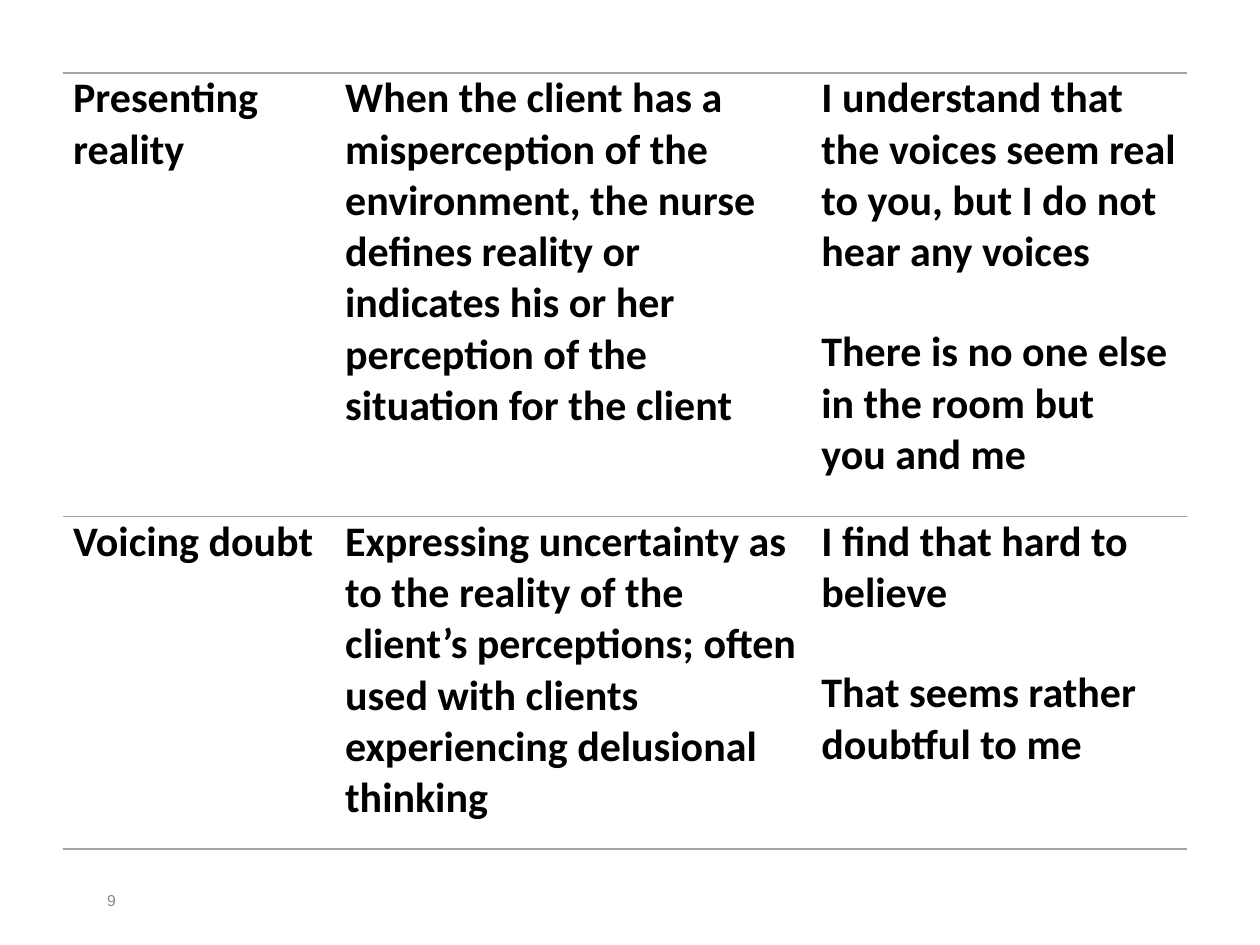
import pptx
import pptx.util
import pptx.dml.color
import pptx.enum.text
import lxml.etree

Inches, Pt = pptx.util.Inches, pptx.util.Pt
BLACK = pptx.dml.color.RGBColor(0x00, 0x00, 0x00)
GREY = pptx.dml.color.RGBColor(0x88, 0x88, 0x88)
RULE = pptx.dml.color.RGBColor(0xA4, 0xA4, 0xA4)
NS = "http://schemas.openxmlformats.org/drawingml/2006/main"

# Content: each cell is a list of statements; \v breaks a line
ROWS = [
    [["Presenting\vreality"],
     ["When the client has a\vmisperception of the\venvironment, the nurse\v"
      "defines reality or\vindicates his or her\vperception of the\v"
      "situation for the client"],
     ["I understand that\vthe voices seem real\vto you, but I do not\v"
      "hear any voices",
      "There is no one else\vin the room but\vyou and me"]],
    [["Voicing doubt"],
     ["Expressing uncertainty as\vto the reality of the\v"
      "client’s perceptions; often\vused with clients\v"
      "experiencing delusional\vthinking"],
     ["I find that hard to\vbelieve",
      "That seems rather\vdoubtful to me"]],
]
WIDTHS = [2.11, 3.82, 2.99]
HEIGHTS = [3.52, 2.64]
INDENTS = [0.08, 0.13, 0.09]
GAP = Pt(28)


def style(para, name, size, color, bold=False):
    font = para.font
    font.name, font.size, font.bold = name, Pt(size), bold
    font.color.rgb = color


def border(cell):
    """Rule the top and bottom of a cell, leaving its sides open."""
    props = cell._tc.get_or_add_tcPr()
    for side in ("lnL", "lnR", "lnT", "lnB"):
        line = lxml.etree.SubElement(props, f"{{{NS}}}{side}", w=str(Pt(1)))
        if side in ("lnL", "lnR"):
            lxml.etree.SubElement(line, f"{{{NS}}}noFill")
        else:
            fill = lxml.etree.SubElement(line, f"{{{NS}}}solidFill")
            lxml.etree.SubElement(fill, f"{{{NS}}}srgbClr", val=str(RULE))


def fill_cell(cell, texts, indent):
    border(cell)
    cell.fill.background()
    cell.margin_left = Inches(indent)
    cell.margin_right = cell.margin_top = cell.margin_bottom = 0
    frame = cell.text_frame
    for i, text in enumerate(texts):
        para = frame.add_paragraph() if i else frame.paragraphs[0]
        para.text = text
        style(para, "Calibri", 24, BLACK, True)
        if i:
            para.space_before = GAP


def main():
    deck = pptx.Presentation()
    deck.slide_width, deck.slide_height = Inches(10), Inches(7.5)
    slide = deck.slides.add_slide(deck.slide_layouts[6])

    # Page number
    box = slide.shapes.add_textbox(
        Inches(0.76), Inches(7.07), Inches(0.19), Inches(0.17))
    frame = box.text_frame
    frame.word_wrap = True
    frame.margin_left = frame.margin_top = frame.margin_bottom = 0
    frame.margin_right = Inches(0.03)
    para = frame.paragraphs[0]
    para.text = "9"
    para.alignment = pptx.enum.text.PP_ALIGN.RIGHT
    style(para, "Arial", 9, GREY)

    # Table of techniques
    table = slide.shapes.add_table(
        len(ROWS), len(WIDTHS), Inches(0.5), Inches(0.58),
        Inches(sum(WIDTHS)), Inches(sum(HEIGHTS))).table
    table.first_row = table.horz_banding = False
    for col, width in zip(table.columns, WIDTHS):
        col.width = Inches(width)
    for r, row in enumerate(ROWS):
        table.rows[r].height = Inches(HEIGHTS[r])
        for c, texts in enumerate(row):
            fill_cell(table.cell(r, c), texts, INDENTS[c])

    deck.save("out.pptx")


if __name__ == "__main__":
    main()
